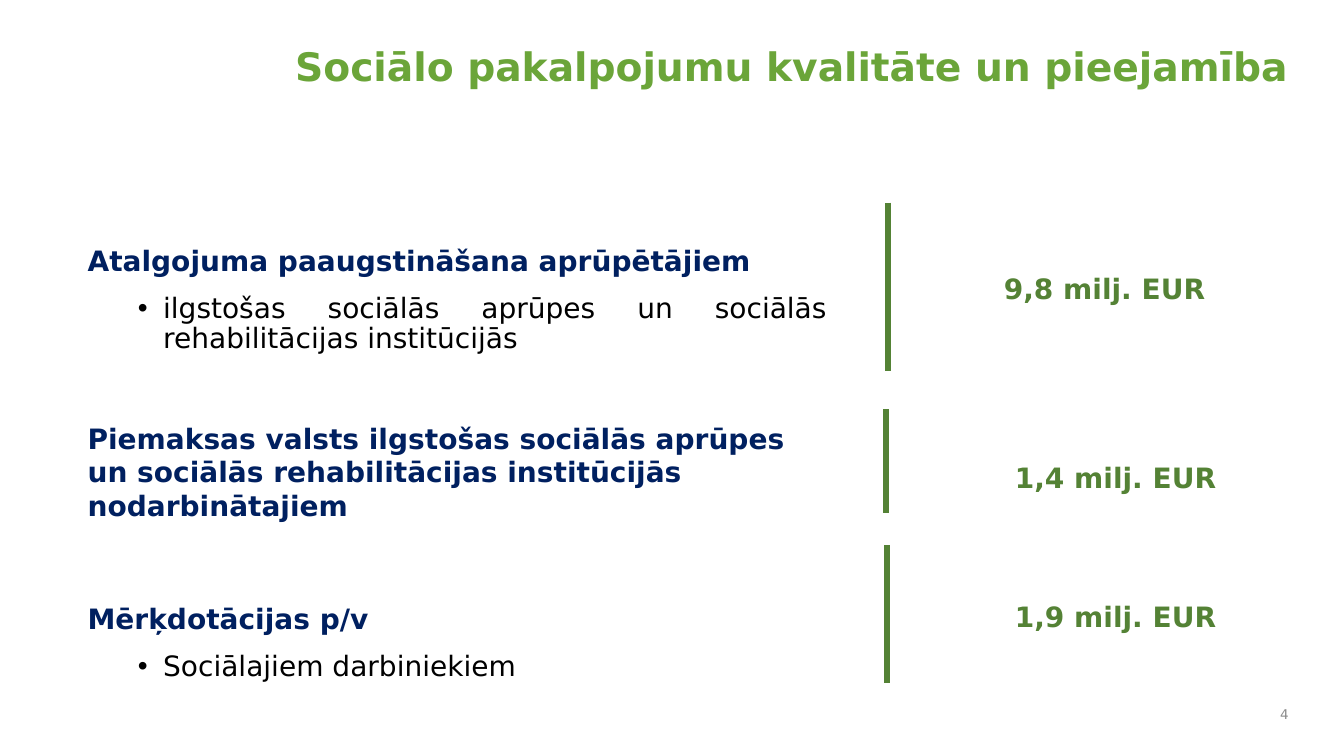
from dataclasses import dataclass
from lxml.etree import SubElement
from pptx import Presentation
from pptx.dml.color import RGBColor
from pptx.enum.shapes import MSO_CONNECTOR
from pptx.enum.text import MSO_ANCHOR, PP_ALIGN
from pptx.oxml.ns import qn
from pptx.util import Inches, Pt

TITLE = "Sociālo pakalpojumu kvalitāte un pieejamība"
PAGE = "4"
ROWS = [
    {"head": "Atalgojuma paaugstināšana aprūpētājiem",
     "note": "ilgstošas sociālās aprūpes un sociālās rehabilitācijas institūcijās",
     "sum": "9,8 milj. EUR", "top": 31.6, "rule": (66.09, 26.8, 49.07),
     "cell": (67.67, 35.73)},
    {"head": "Piemaksas valsts ilgstošas sociālās aprūpes un sociālās "
             "rehabilitācijas institūcijās nodarbinātajiem",
     "note": None,
     "sum": "1,4 milj. EUR", "top": 55.07, "rule": (65.94, 54.13, 67.87),
     "cell": (68.49, 60.8)},
    {"head": "Mērķdotācijas p/v",
     "note": "Sociālajiem darbiniekiem",
     "sum": "1,9 milj. EUR", "top": 78.93, "rule": (66.02, 72.13, 90.4),
     "cell": (68.49, 79.2)},
]


@dataclass
class Theme:
    font: str = "DejaVu Sans"
    title: str = "6BA539"
    head: str = "002060"
    note: str = "000000"
    sum: str = "548235"
    page: str = "8C8C8C"
    big: float = 28
    text: float = 20
    small: float = 9.6
    rule: float = 4.5


theme = Theme()
deck = Presentation()
deck.slide_width, deck.slide_height = Inches(13.33), Inches(7.5)
slide = deck.slides.add_slide(deck.slide_layouts[6])


def wide(share):
    return round(deck.slide_width * share / 100)


def high(share):
    return round(deck.slide_height * share / 100)


def frame(x, y, w, h, anchor=MSO_ANCHOR.TOP):
    box = slide.shapes.add_textbox(wide(x), high(y), wide(w), high(h))
    box.text_frame.word_wrap = True
    box.text_frame.vertical_anchor = anchor
    return box.text_frame


def write(para, text, color, size=theme.text, bold=True,
          align=PP_ALIGN.LEFT, line=0.9, before=0, bullet=False):
    para.alignment, para.line_spacing = align, line
    para.space_before = Pt(before)
    if bullet:
        props = para._p.get_or_add_pPr()
        props.set("marL", str(Inches(0.75)))
        props.set("indent", str(Inches(-0.25)))
        SubElement(props, qn("a:buFont"), typeface="Arial")
        SubElement(props, qn("a:buChar"), char="•")
    run = para.add_run()
    run.text = text
    font = run.font
    font.name, font.size, font.bold = theme.font, Pt(size), bold
    font.color.rgb = RGBColor.from_string(color)


def draw(x, top, end):
    rule = slide.shapes.add_connector(
        MSO_CONNECTOR.STRAIGHT, wide(x), high(top), wide(x), high(end))
    rule.line.color.rgb = RGBColor.from_string(theme.sum)
    rule.line.width = Pt(theme.rule)
    SubElement(rule._element.spPr, qn("a:effectLst"))


write(frame(21.23, 5.6, 76.29, 15.07).paragraphs[0], TITLE, theme.title,
      size=theme.big)

for row in ROWS:
    body = frame(5.78, row["top"], 56.49, 15)
    write(body.paragraphs[0], row["head"], theme.head, line=1.0)
    if row["note"]:
        write(body.add_paragraph(), row["note"], theme.note, bold=False,
              align=PP_ALIGN.JUSTIFY, before=12, bullet=True)
    draw(*row["rule"])
    write(frame(*row["cell"], 29.03, 10).paragraphs[0], row["sum"], theme.sum,
          align=PP_ALIGN.CENTER)

write(frame(93.32, 92.27, 3.3, 4.4, MSO_ANCHOR.MIDDLE).paragraphs[0], PAGE,
      theme.page, size=theme.small, bold=False, align=PP_ALIGN.RIGHT, line=1.0)

deck.save("out.pptx")
